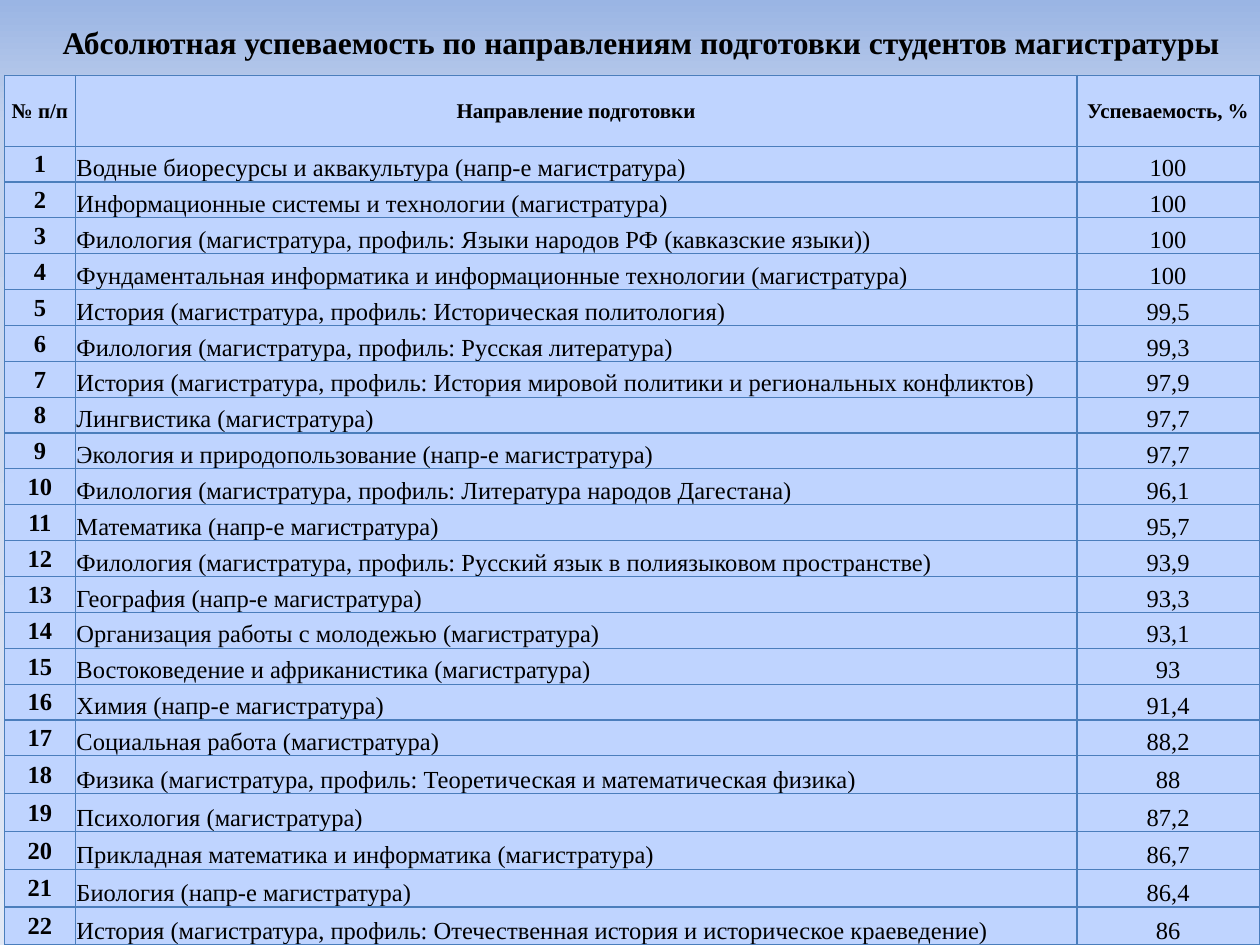
from copy import deepcopy
from typing import NamedTuple

from lxml import etree
from pptx import Presentation
from pptx.dml.color import RGBColor
from pptx.enum.text import MSO_ANCHOR, MSO_AUTO_SIZE, PP_ALIGN
from pptx.oxml.ns import qn
from pptx.util import Pt

LEFT, CENTER = PP_ALIGN.LEFT, PP_ALIGN.CENTER
MIDDLE, BOTTOM = MSO_ANCHOR.MIDDLE, MSO_ANCHOR.BOTTOM
NO_AUTOFIT = MSO_AUTO_SIZE.NONE
FONT = "Times New Roman"
COLORS = {"text": "000000", "cell": "BFD4FF", "border": "4B7EBC"}
BACKGROUND_STOPS = [(0, "9AB5E4"), (0.13, "C2D1ED"), (1, "E1E8F5")]
COLUMN_WIDTHS = [40.4, 572.4, 104.2]
HEADER_HEIGHT, ROW_HEIGHT, TALL_ROW_HEIGHT = 40.5, 20.5, 21.6
TALL_ROWS_FROM = 18
BORDER_WIDTH = 0.75


class CellStyle(NamedTuple):
    size: float
    bold: bool
    align: PP_ALIGN
    anchor: MSO_ANCHOR


class Program(NamedTuple):
    name: str
    performance: str


HEADER_STYLE = CellStyle(12, True, CENTER, MIDDLE)
ROW_STYLES = [
    CellStyle(14, True, CENTER, MIDDLE),
    CellStyle(14, False, LEFT, BOTTOM),
    CellStyle(14, False, CENTER, BOTTOM),
]
TITLE = "Абсолютная успеваемость по направлениям подготовки студентов магистратуры"
HEADERS = ["№ п/п", "Направление подготовки", "Успеваемость, %"]
PROGRAMS = [
    Program("Водные биоресурсы и аквакультура (напр-е магистратура)", "100"),
    Program("Информационные системы и технологии (магистратура)", "100"),
    Program("Филология (магистратура, профиль: Языки народов РФ (кавказские языки))", "100"),
    Program("Фундаментальная информатика и информационные технологии (магистратура)", "100"),
    Program("История (магистратура, профиль: Историческая политология)", "99,5"),
    Program("Филология (магистратура, профиль: Русская литература)", "99,3"),
    Program("История (магистратура, профиль: История мировой политики и региональных конфликтов)", "97,9"),
    Program("Лингвистика (магистратура)", "97,7"),
    Program("Экология и природопользование (напр-е магистратура)", "97,7"),
    Program("Филология (магистратура, профиль: Литература народов Дагестана)", "96,1"),
    Program("Математика (напр-е магистратура)", "95,7"),
    Program("Филология (магистратура, профиль: Русский язык в полиязыковом пространстве)", "93,9"),
    Program("География (напр-е магистратура)", "93,3"),
    Program("Организация работы с молодежью (магистратура)", "93,1"),
    Program("Востоковедение и африканистика (магистратура)", "93"),
    Program("Химия (напр-е магистратура)", "91,4"),
    Program("Социальная работа (магистратура)", "88,2"),
    Program("Физика (магистратура, профиль: Теоретическая и математическая физика)", "88"),
    Program("Психология (магистратура)", "87,2"),
    Program("Прикладная математика и информатика (магистратура)", "86,7"),
    Program("Биология (напр-е магистратура)", "86,4"),
    Program("История (магистратура, профиль: Отечественная история и историческое краеведение)", "86"),
]


def format_paragraph(paragraph, size: float, bold: bool, align: PP_ALIGN) -> None:
    paragraph.alignment = align
    paragraph.font.name = FONT
    paragraph.font.size = Pt(size)
    paragraph.font.bold = bold
    paragraph.font.color.rgb = RGBColor.from_string(COLORS["text"])


def set_background(slide) -> None:
    fill = slide.background.fill
    fill.gradient()
    fill.gradient_angle = 270
    stop_list = next(slide.element.iter(qn("a:gsLst")))
    stop_list.append(deepcopy(stop_list[-1]))
    for stop, (position, color) in zip(fill.gradient_stops, BACKGROUND_STOPS):
        stop.position = position
        stop.color.rgb = RGBColor.from_string(color)


def add_title(slide) -> None:
    title = slide.shapes.title
    title.left, title.top, title.width, title.height = Pt(13.7), Pt(9.4), Pt(705.6), Pt(28.8)
    title.text_frame.text = TITLE
    title.text_frame.auto_size = NO_AUTOFIT
    title.text_frame.vertical_anchor = MIDDLE
    format_paragraph(title.text_frame.paragraphs[0], 18, True, CENTER)


def set_borders(cell) -> None:
    properties = cell._tc.get_or_add_tcPr()
    for index, side in enumerate(("a:lnL", "a:lnR", "a:lnT", "a:lnB")):
        line = etree.Element(qn(side), w=str(Pt(BORDER_WIDTH)))
        fill = etree.SubElement(line, qn("a:solidFill"))
        etree.SubElement(fill, qn("a:srgbClr"), val=COLORS["border"])
        properties.insert(index, line)


def fill_cell(cell, text: str, style: CellStyle) -> None:
    cell.text = text
    cell.vertical_anchor = style.anchor
    cell.margin_left = cell.margin_right = cell.margin_top = Pt(0.7)
    cell.margin_bottom = Pt(0)
    format_paragraph(cell.text_frame.paragraphs[0], style.size, style.bold, style.align)
    cell.fill.solid()
    cell.fill.fore_color.rgb = RGBColor.from_string(COLORS["cell"])
    set_borders(cell)


def add_performance_table(slide) -> None:
    heights = [HEADER_HEIGHT] + [
        TALL_ROW_HEIGHT if number >= TALL_ROWS_FROM else ROW_HEIGHT
        for number in range(1, len(PROGRAMS) + 1)
    ]
    table = slide.shapes.add_table(
        len(heights), len(COLUMN_WIDTHS), Pt(2.6), Pt(43),
        Pt(sum(COLUMN_WIDTHS)), Pt(sum(heights)),
    ).table
    table.first_row = table.horz_banding = False
    for column, width in zip(table.columns, COLUMN_WIDTHS):
        column.width = Pt(width)
    for row, height in zip(table.rows, heights):
        row.height = Pt(height)
    for column, text in enumerate(HEADERS):
        fill_cell(table.cell(0, column), text, HEADER_STYLE)
    for number, program in enumerate(PROGRAMS, start=1):
        for column, (text, style) in enumerate(zip((str(number), *program), ROW_STYLES)):
            fill_cell(table.cell(number, column), text, style)


def main() -> None:
    presentation = Presentation()
    presentation.slide_width, presentation.slide_height = Pt(720), Pt(540)
    slide = presentation.slides.add_slide(presentation.slide_layouts[5])
    set_background(slide)
    add_title(slide)
    add_performance_table(slide)
    presentation.save("out.pptx")


if __name__ == "__main__":
    main()
